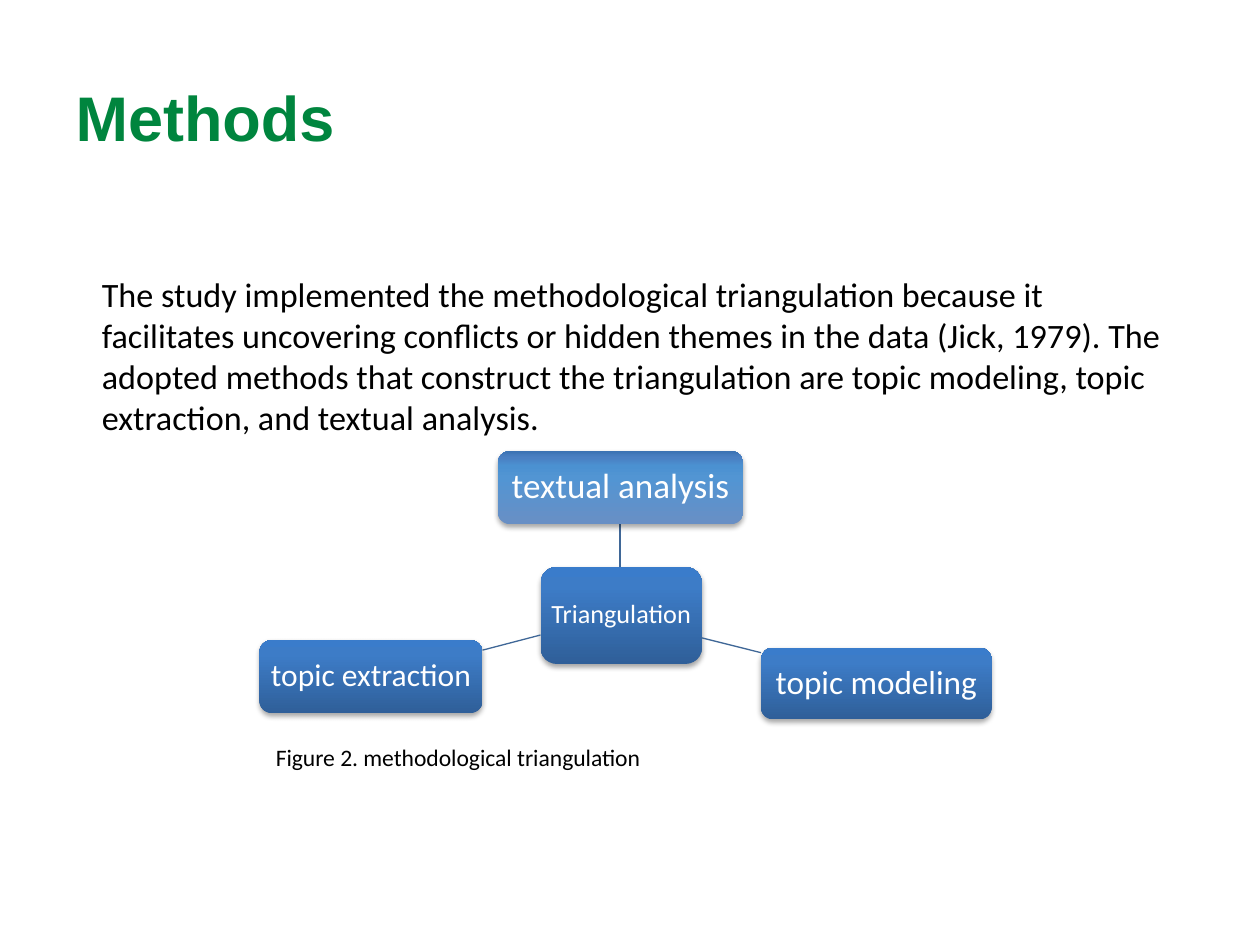
from lxml import etree
from pptx import Presentation
from pptx.dml.color import RGBColor
from pptx.enum.shapes import MSO_CONNECTOR, MSO_SHAPE
from pptx.enum.text import MSO_ANCHOR, PP_ALIGN
from pptx.oxml.ns import qn
from pptx.util import Inches, Pt

LEFT, CENTER = PP_ALIGN.LEFT, PP_ALIGN.CENTER
MIDDLE, BOTTOM = MSO_ANCHOR.MIDDLE, MSO_ANCHOR.BOTTOM
ROUNDED = MSO_SHAPE.ROUNDED_RECTANGLE
STRAIGHT = MSO_CONNECTOR.STRAIGHT

GREEN = RGBColor(0x00, 0x85, 0x3E)
BLACK = RGBColor(0x00, 0x00, 0x00)
WHITE = RGBColor(0xFF, 0xFF, 0xFF)
LINE_BLUE = RGBColor(0x3F, 0x67, 0x97)
DEEP_BLUE = (
    (0, RGBColor(0x2F, 0x5F, 0x99)),
    (80, RGBColor(0x3D, 0x7C, 0xC7)),
    (100, RGBColor(0x3A, 0x7C, 0xCB)),
)
LIGHT_BLUE = (
    (0, RGBColor(0x68, 0x8F, 0xC5)),
    (64, RGBColor(0x52, 0x95, 0xD3)),
    (79, RGBColor(0x4B, 0x91, 0xD1)),
    (91, RGBColor(0x4A, 0x80, 0xC3)),
    (100, RGBColor(0x3B, 0x72, 0xB3)),
)


class SlideBuilder:
    heading_font = "Arial"
    body_font = "Calibri"

    def __init__(self, deck):
        self.page = deck.slides.add_slide(deck.slide_layouts[5])

    def add_words(self, frame, text, size, color, font=body_font, bold=False, align=LEFT):
        frame.word_wrap = True
        para = frame.paragraphs[0]
        para.alignment = align
        span = para.add_run()
        span.text = text
        span.font.name = font
        span.font.size = Pt(size)
        span.font.bold = bold
        span.font.color.rgb = color
        return para

    def title(self, text, *place):
        box = self.page.shapes.title
        box.left, box.top, box.width, box.height = map(Inches, place)
        box.text_frame.vertical_anchor = BOTTOM
        self.add_words(box.text_frame, text, 36, GREEN, self.heading_font, True)

    def text(self, text, size, *place):
        box = self.page.shapes.add_textbox(*map(Inches, place))
        self.add_words(box.text_frame, text, size, BLACK)

    def node(self, text, size, inset, stops, *place):
        box = self.page.shapes.add_shape(ROUNDED, *map(Inches, place))
        self.gradient(box, stops)
        box.line.fill.background()
        self.soft_shadow(box)
        frame = box.text_frame
        frame.vertical_anchor = MIDDLE
        frame.margin_left = frame.margin_right = Inches(inset)
        frame.margin_top = frame.margin_bottom = Inches(inset)
        para = self.add_words(frame, text, size, WHITE, align=CENTER)
        para.line_spacing = 0.9

    def gradient(self, box, stops):
        box.fill.gradient()
        box.fill.gradient_angle = 90
        stop_list = box._element.spPr.find(".//" + qn("a:gsLst"))
        for old_stop in list(stop_list):
            stop_list.remove(old_stop)
        for percent, color in stops:
            stop = etree.SubElement(stop_list, qn("a:gs"), pos=str(percent * 1000))
            etree.SubElement(stop, qn("a:srgbClr"), val=str(color))

    def soft_shadow(self, box):
        box.shadow.inherit = False
        effects = box._element.spPr.find(qn("a:effectLst"))
        shadow = etree.SubElement(
            effects, qn("a:outerShdw"), blurRad=str(Pt(3.1)), dist=str(Pt(1.8)),
            dir="5400000", rotWithShape="0",
        )
        color = etree.SubElement(shadow, qn("a:srgbClr"), val=str(BLACK))
        etree.SubElement(color, qn("a:alpha"), val="35000")

    def link(self, *ends):
        line = self.page.shapes.add_connector(STRAIGHT, *map(Inches, ends))
        line.line.color.rgb = LINE_BLUE
        line.line.width = Pt(0.75)
        etree.SubElement(line._element.spPr, qn("a:effectLst"))


def main():
    deck = Presentation()
    deck.slide_width, deck.slide_height = Inches(10), Inches(7.5)
    slide = SlideBuilder(deck)

    slide.title("Methods", 0.5, 0.02, 9, 1.25)

    slide.node("Triangulation", 15, 0.04, DEEP_BLUE, 4.29, 4.5, 1.28, 0.77)
    slide.link(5.56, 5.06, 6.04, 5.18)
    slide.node("topic modeling", 19, 0.05, DEEP_BLUE, 6.04, 5.14, 1.83, 0.57)
    slide.link(4.92, 4.5, 4.92, 4.16)
    slide.node("textual analysis", 20, 0.06, LIGHT_BLUE, 3.95, 3.58, 1.95, 0.58)
    slide.link(4.29, 5.04, 3.83, 5.16)
    slide.node("topic extraction", 18, 0.05, DEEP_BLUE, 2.06, 5.08, 1.77, 0.58)

    slide.text("Figure 2. methodological triangulation", 13.5, 2.09, 5.85, 4.09, 0.33)
    slide.text(
        "The study implemented the methodological triangulation because it "
        "facilitates uncovering conflicts or hidden themes in the data (Jick, 1979). "
        "The adopted methods that construct the triangulation are topic modeling, "
        "topic extraction, and textual analysis.",
        19.5, 0.71, 2.12, 8.69, 1.41,
    )

    deck.save("out.pptx")


if __name__ == "__main__":
    main()
